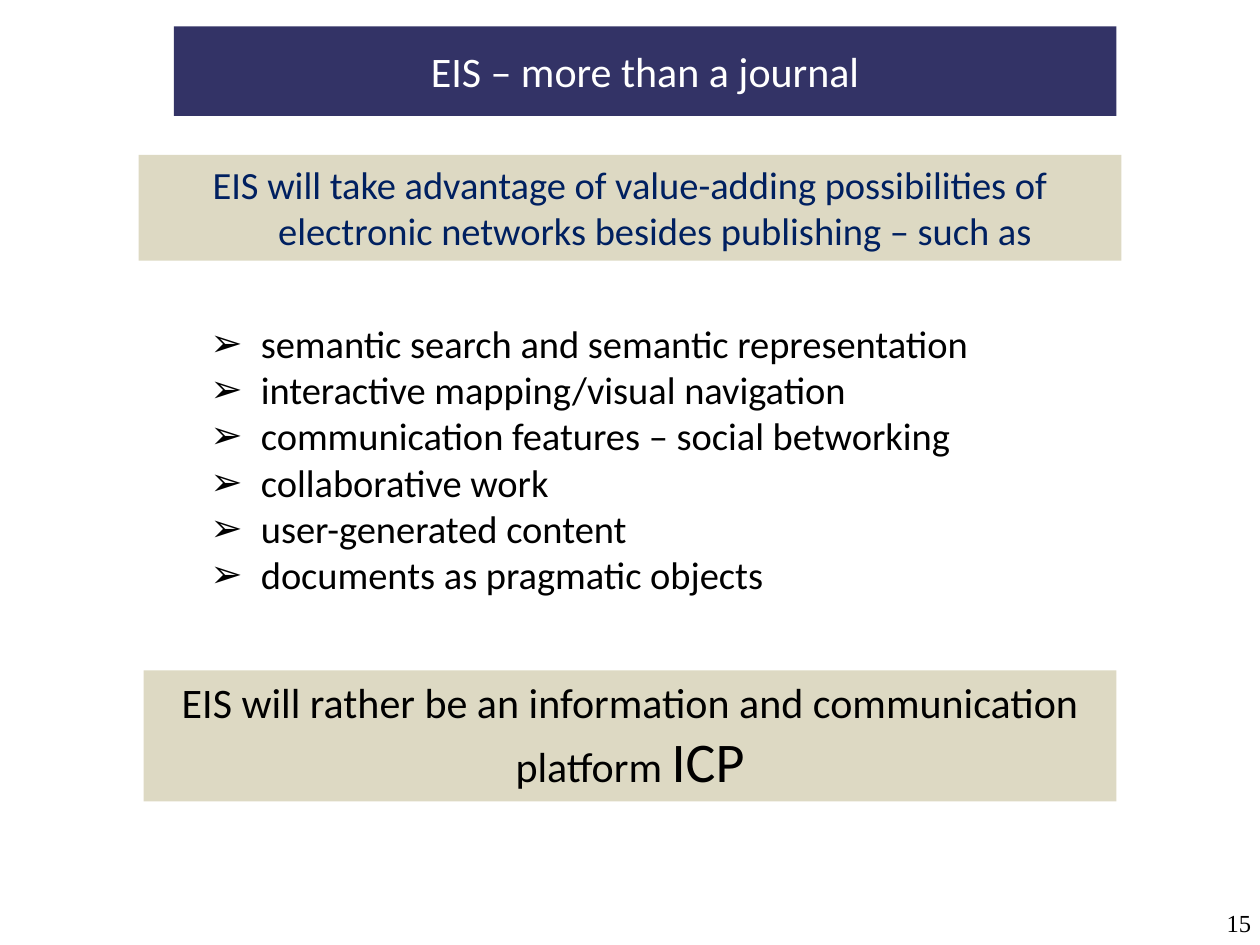
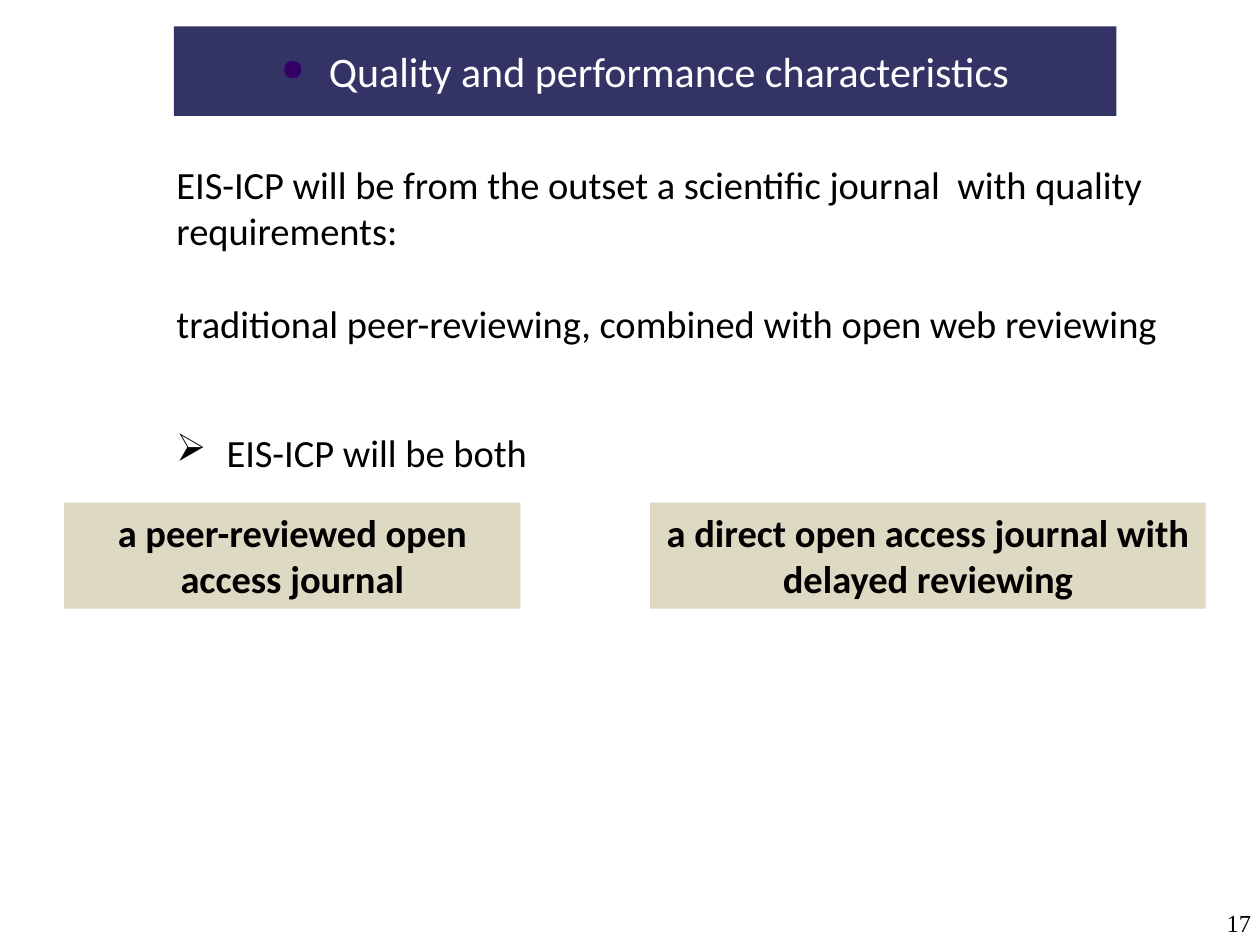
from dataclasses import dataclass
from typing import NamedTuple, Optional

from lxml import etree
from pptx import Presentation
from pptx.dml.color import RGBColor
from pptx.enum.shapes import MSO_SHAPE
from pptx.enum.text import MSO_ANCHOR, MSO_AUTO_SIZE, PP_ALIGN
from pptx.oxml.ns import qn
from pptx.util import Inches, Pt

LEFT, CENTER, RIGHT = PP_ALIGN.LEFT, PP_ALIGN.CENTER, PP_ALIGN.RIGHT
TOP, MIDDLE = MSO_ANCHOR.TOP, MSO_ANCHOR.MIDDLE
RECTANGLE = MSO_SHAPE.RECTANGLE
NO_AUTOFIT = MSO_AUTO_SIZE.NONE

SLIDE_W, SLIDE_H = Inches(10), Inches(7.5)
COLS, ROWS = 100, 75
TITLE_AND_CONTENT = 1


@dataclass(frozen=True)
class Theme:
    font: str = "Calibri"
    number_font: str = "Times New Roman"
    navy: str = "333366"
    sand: str = "DDD9C3"
    blue: str = "002060"
    purple: str = "330066"
    white: str = "FFFFFF"
    black: str = "000000"
    title: float = 24
    body: float = 22
    accent: float = 32
    number: float = 14


THEME = Theme()


class Box(NamedTuple):
    """Left, top, width and height in grid columns and rows."""
    left: float
    top: float
    width: float
    height: float


class Run(NamedTuple):
    text: str
    size: float = THEME.body
    color: str = THEME.black
    bold: bool = False
    font: str = THEME.font


class Bullet(NamedTuple):
    char: str
    color: Optional[str] = None
    percent: int = 100


class Para(NamedTuple):
    runs: list[Run]
    align: PP_ALIGN = LEFT
    hanging: float = 0
    before: float = 0
    bullet: Optional[Bullet] = None


ARROW = Bullet("➢")
DOT = Bullet("●", THEME.purple, 70)
HANGING = 0.4
TITLE_BOX = Box(13.8, 2.1, 74.8, 7.1)
NUMBER_BOX = Box(92.5, 72.1, 6.8, 2.9)


# Text and placement
def place(sp, box: Box) -> None:
    sp.left, sp.width = (int(SLIDE_W * n / COLS) for n in (box.left, box.width))
    sp.top, sp.height = (int(SLIDE_H * n / ROWS) for n in (box.top, box.height))


def set_bullet(p, bullet: Optional[Bullet]) -> None:
    pPr = p._p.get_or_add_pPr()
    if bullet is None:
        etree.SubElement(pPr, qn("a:buNone"))
        return
    if bullet.color:
        color = etree.SubElement(pPr, qn("a:buClr"))
        etree.SubElement(color, qn("a:srgbClr"), val=bullet.color)
    etree.SubElement(pPr, qn("a:buSzPct"), val=str(bullet.percent * 1000))
    etree.SubElement(pPr, qn("a:buChar"), char=bullet.char)


def write(sp, paras: list[Para], anchor: MSO_ANCHOR = TOP) -> None:
    tf = sp.text_frame
    tf.word_wrap = True
    tf.auto_size = NO_AUTOFIT
    tf.vertical_anchor = anchor
    for i, para in enumerate(paras):
        p = tf.add_paragraph() if i else tf.paragraphs[0]
        p.alignment = para.align
        p.space_before = Pt(para.before)
        pPr = p._p.get_or_add_pPr()
        pPr.set("marL", str(Inches(para.hanging)))
        pPr.set("indent", str(-Inches(para.hanging)))
        set_bullet(p, para.bullet)
        for run in para.runs:
            r = p.add_run()
            r.text = run.text
            r.font.name, r.font.size = run.font, Pt(run.size)
            r.font.bold = run.bold
            r.font.color.rgb = RGBColor.from_string(run.color)


def paint(sp, color: str) -> None:
    sp.fill.solid()
    sp.fill.fore_color.rgb = RGBColor.from_string(color)
    sp.line.fill.background()


# Slide parts
def add_panel(s, box: Box, para: Para) -> None:
    sp = s.shapes.add_shape(RECTANGLE, 0, 0, 0, 0)
    sp.shadow.inherit = False
    place(sp, box)
    paint(sp, THEME.sand)
    write(sp, [para])


def add_text(s, box: Box, para: Para):
    sp = s.shapes.add_textbox(0, 0, 0, 0)
    place(sp, box)
    write(sp, [para])
    return sp


def fill_body(s, box: Box, paras: list[Para]) -> None:
    body = s.placeholders[1]
    place(body, box)
    write(body, paras)


def add_slide(prs, title: str, number: int, bullet: Optional[Bullet] = None):
    s = prs.slides.add_slide(prs.slide_layouts[TITLE_AND_CONTENT])
    sp = s.shapes.title
    place(sp, TITLE_BOX)
    paint(sp, THEME.navy)
    heading = Run(title, THEME.title, THEME.white)
    write(sp, [Para([heading], CENTER, 0.38, 7, bullet)], MIDDLE)
    page = Run(str(number), THEME.number, font=THEME.number_font)
    tf = add_text(s, NUMBER_BOX, Para([page], RIGHT)).text_frame
    tf.margin_left = tf.margin_right = tf.margin_top = tf.margin_bottom = 0
    return s


# Slides
def more_than_a_journal(prs) -> None:
    s = add_slide(prs, "EIS – more than a journal", 15)
    lead = Run("EIS will take advantage of value-adding possibilities of "
               "electronic networks besides publishing – such as", color=THEME.blue)
    add_panel(s, Box(11, 12.3, 78, 8.4), Para([lead], CENTER, HANGING))
    features = ["semantic search and semantic representation",
                "interactive mapping/visual navigation",
                "communication features – social betworking",
                "collaborative work",
                "user-generated content",
                "documents as pragmatic objects"]
    fill_body(s, Box(15.7, 24.9, 68.5, 23.2),
              [Para([Run(f)], hanging=HANGING, bullet=ARROW) for f in features])
    add_panel(s, Box(11.4, 53.2, 77.2, 10.4), Para([
        Run("EIS will rather be an information and communication platform ", THEME.title),
        Run("ICP", THEME.accent)], CENTER))


def quality_characteristics(prs) -> None:
    s = add_slide(prs, "Quality and performance characteristics", 17, DOT)
    fill_body(s, Box(13, 12.3, 82.8, 19.5), [
        Para([Run("EIS-ICP will be from the outset a scientific journal  with quality "
                  "requirements:")]),
        Para([Run("traditional peer-reviewing, combined with open web reviewing")],
             before=26.5)])
    add_text(s, Box(13, 33.6, 30.7, 4.7),
             Para([Run("EIS-ICP will be both")], hanging=HANGING, bullet=ARROW))
    journals = [(5.1, 36.2, "a peer-reviewed open access journal"),
                (51.6, 44.1, "a direct open access journal with delayed reviewing")]
    for left, width, text in journals:
        add_panel(s, Box(left, 39.9, width, 8.4), Para([Run(text, bold=True)], CENTER))


def main() -> None:
    prs = Presentation()
    prs.slide_width, prs.slide_height = SLIDE_W, SLIDE_H
    more_than_a_journal(prs)
    quality_characteristics(prs)
    prs.save("out.pptx")


if __name__ == "__main__":
    main()
